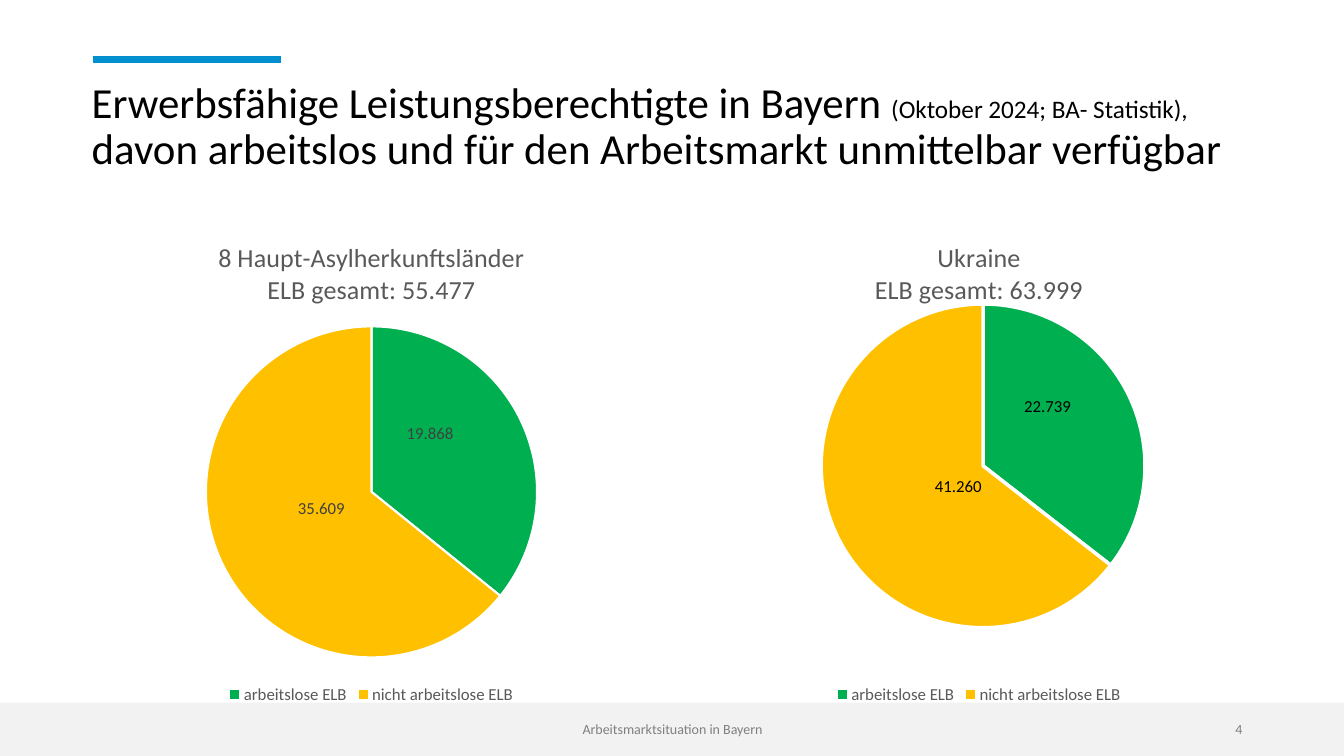
from dataclasses import dataclass

from lxml import etree
from pptx import Presentation
from pptx.chart.data import CategoryChartData
from pptx.dml.color import RGBColor
from pptx.enum.chart import XL_CHART_TYPE, XL_LABEL_POSITION, XL_LEGEND_POSITION
from pptx.enum.shapes import MSO_CONNECTOR, MSO_SHAPE
from pptx.enum.text import MSO_ANCHOR, MSO_AUTO_SIZE, PP_ALIGN
from pptx.oxml.ns import qn
from pptx.util import Inches, Pt

PIE, BOTTOM = XL_CHART_TYPE.PIE, XL_LEGEND_POSITION.BOTTOM
CENTER_LABEL, BEST_FIT = XL_LABEL_POSITION.CENTER, XL_LABEL_POSITION.BEST_FIT

# Content
HEADLINE = [
    ("Erwerbsfähige Leistungsberechtigte in Bayern ", "headline"),
    ("(Oktober 2024; BA- Statistik),", "source"),
    ("davon arbeitslos und für den Arbeitsmarkt unmittelbar verfügbar", "headline"),
]
GROUPS = ["arbeitslose ELB", "nicht arbeitslose ELB"]
# In percent of the chart: plot x, y, w, h and label shifts from the slice centres
ORIGINS = [
    dict(title="8 Haupt-Asylherkunftsländer\vELB gesamt: 55.477", counts=(19868, 35609),
         left=0.91, width=5.55, plot=(10, 21.5, 80, 68),
         shifts=((-2.9, -4.6), (4.4, -3.9)), label_color="404040", gap=1.5),
    dict(title="Ukraine\nELB gesamt: 63.999", counts=(22739, 41260),
         left=7, width=5.42, plot=(9.8, 16.9, 81.9, 66.5),
         shifts=((-1.5, -4.9), (8.8, -3.1)), label_color="000000", gap=2.5),
]
FOOTERS = [
    ("Arbeitsmarktsituation in Bayern", 4.42, 4.5, PP_ALIGN.CENTER),
    ("4", 9.42, 3, PP_ALIGN.RIGHT),
]


@dataclass(frozen=True)
class Theme:
    font: str = "Calibri"
    black: str = "000000"
    white: str = "FFFFFF"
    accent: str = "008FCF"
    band: str = "F2F2F2"
    footer_text: str = "808080"
    chart_text: str = "595959"
    slices: tuple = ("00B050", "FFC000")
    headline: float = 30.6
    source: float = 18
    chart_title: float = 18.6
    chart_label: float = 12
    footer: float = 10


THEME = Theme()


def rgb(color):
    return RGBColor.from_string(color)


def style(font, size, color):
    font.name, font.size, font.bold = THEME.font, Pt(size), False
    font.color.rgb = rgb(color)


def manual_layout(percents, **modes):
    layout = etree.Element(qn("c:layout"))
    manual = etree.SubElement(layout, qn("c:manualLayout"))
    shares = {tag: round(percent / 100, 3) for tag, percent in zip("xywh", percents)}
    for tag, value in (modes | shares).items():
        etree.SubElement(manual, qn("c:" + tag)).set("val", str(value))
    return layout


def add_pie(slide, origin):
    data = CategoryChartData(number_format="#,##0")
    data.categories = GROUPS
    data.add_series("Series 1", origin["counts"])
    chart = slide.shapes.add_chart(PIE, Inches(origin["left"]), Inches(2.2),
                                   Inches(origin["width"]), Inches(4.83), data).chart
    style(chart.font, THEME.chart_label, THEME.chart_text)

    # Title and legend
    chart.has_title = True
    chart.chart_title.include_in_layout = False
    chart.chart_title.text_frame.text = origin["title"]
    for line in chart.chart_title.text_frame.paragraphs:
        for run in line.runs:
            style(run.font, THEME.chart_title, THEME.chart_text)
    chart.has_legend = True
    chart.legend.position = BOTTOM
    chart.legend.include_in_layout = False
    style(chart.legend.font, THEME.chart_label, THEME.chart_text)

    # Plot area
    plot_area = chart.plots[0]._element.getparent()
    for old in plot_area.findall(qn("c:layout")):
        plot_area.remove(old)
    plot_area.insert(0, manual_layout(origin["plot"], layoutTarget="inner",
                                      xMode="edge", yMode="edge"))

    # Slices and their labels
    chart.plots[0].vary_by_categories = True
    series = chart.plots[0].series[0]
    labels = series.data_labels
    labels.show_value = True
    labels.number_format, labels.number_format_is_linked = "#,##0", False
    labels.position = BEST_FIT
    style(labels.font, THEME.chart_label, origin["label_color"])
    for index, (count, color) in enumerate(zip(origin["counts"], THEME.slices)):
        point = series.points[index]
        point.format.fill.solid()
        point.format.fill.fore_color.rgb = rgb(color)
        point.format.line.color.rgb = rgb(THEME.white)
        point.format.line.width = Pt(origin["gap"])
        label = point.data_label
        label.text_frame.text = f"{count:,}".replace(",", ".")
        style(label.text_frame.paragraphs[0].runs[0].font,
              THEME.chart_label, origin["label_color"])
        label.position = CENTER_LABEL
    for label_xml, shift in zip(series._element.iter(qn("c:dLbl")), origin["shifts"]):
        label_xml.find(qn("c:idx")).addnext(manual_layout(shift))


def main():
    prs = Presentation()
    prs.slide_width, prs.slide_height = Inches(13.33), Inches(7.5)
    slide = prs.slides.add_slide(prs.slide_layouts[5])

    # Footer band and accent line
    band = slide.shapes.add_shape(MSO_SHAPE.RECTANGLE, 0, Inches(6.97),
                                  prs.slide_width, Inches(0.53))
    band.shadow.inherit = False
    band.fill.solid()
    band.fill.fore_color.rgb = rgb(THEME.band)
    band.line.fill.background()
    accent = slide.shapes.add_connector(MSO_CONNECTOR.STRAIGHT, Inches(0.92), Inches(0.59),
                                        Inches(2.79), Inches(0.59))
    accent.line.color.rgb = rgb(THEME.accent)
    accent.line.width = Pt(5)
    etree.SubElement(accent._element.spPr, qn("a:effectLst"))

    # Headline
    title = slide.shapes.title
    title.left, title.top = Inches(0.91), Inches(0.76)
    title.width, title.height = Inches(11.5), Inches(1.37)
    frame = title.text_frame
    frame.margin_left = 0
    frame.word_wrap, frame.auto_size = True, MSO_AUTO_SIZE.NONE
    frame.vertical_anchor = MSO_ANCHOR.TOP
    headline = frame.paragraphs[0]
    headline.alignment, headline.line_spacing = PP_ALIGN.LEFT, 0.9
    for text, role in HEADLINE:
        run = headline.add_run()
        run.text = text
        style(run.font, getattr(THEME, role), THEME.black)
        if role == "source":
            headline.add_line_break()

    # Pie charts
    for origin in ORIGINS:
        add_pie(slide, origin)

    # Footer texts
    for text, left, width, alignment in FOOTERS:
        frame = slide.shapes.add_textbox(Inches(left), Inches(7.03),
                                         Inches(width), Inches(0.4)).text_frame
        frame.word_wrap, frame.vertical_anchor = True, MSO_ANCHOR.MIDDLE
        frame.text = text
        frame.paragraphs[0].alignment = alignment
        style(frame.paragraphs[0].runs[0].font, THEME.footer, THEME.footer_text)

    prs.save("out.pptx")


if __name__ == "__main__":
    main()
